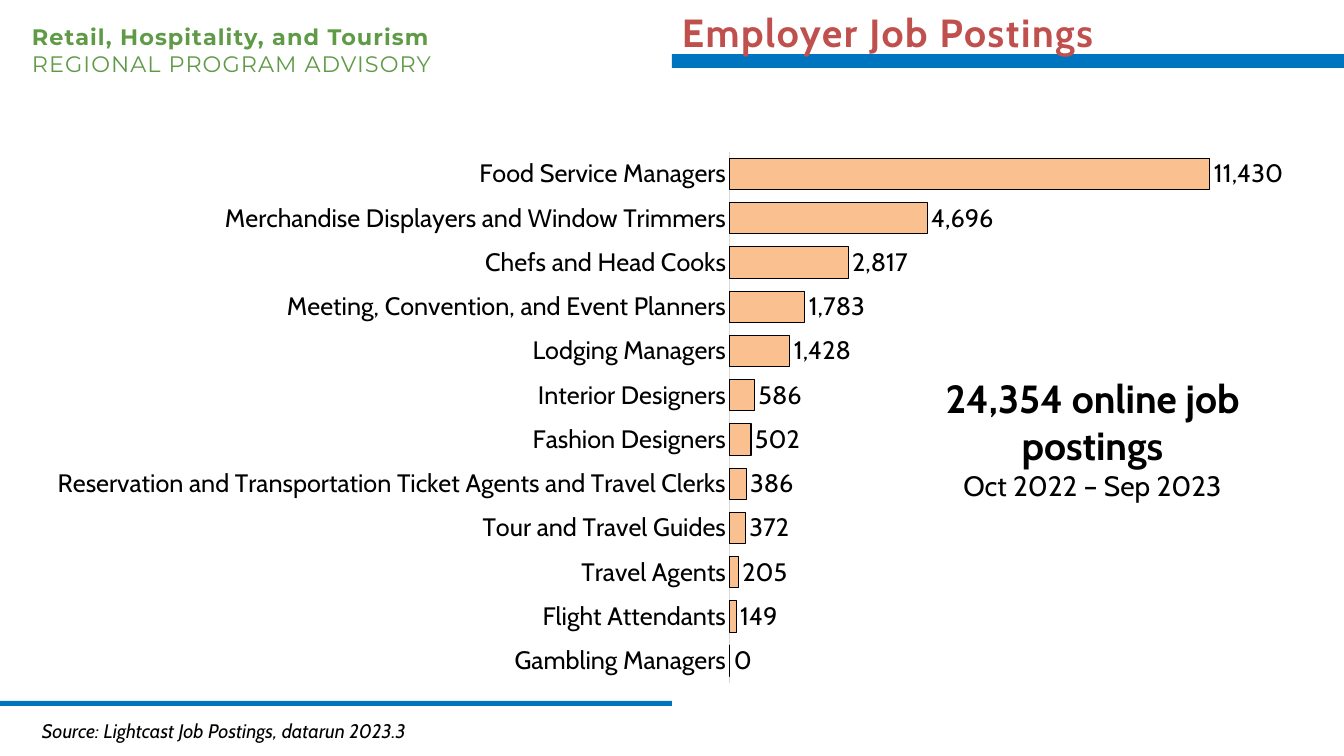
from lxml import etree
from pptx import Presentation
from pptx import util as u
from pptx.chart.data import CategoryChartData
from pptx.dml.color import RGBColor
from pptx.enum import chart as ch, shapes, text
from pptx.oxml import parse_xml
from pptx.oxml.ns import nsdecls

BLUE = RGBColor(0x00, 0x75, 0xBF)
RED = RGBColor(0xC0, 0x50, 0x4D)
GREEN = RGBColor(0x5F, 0x9A, 0x47)
PEACH = RGBColor(0xFA, 0xC0, 0x90)
GRAY = RGBColor(0xD9, 0xD9, 0xD9)
BLACK = RGBColor(0, 0, 0)

PX = 914400 / 100.8
SLIDE = (1344, 756)
CHART_BOX = (32, 141, 1311, 552)
PLOT_BOX = (730, 152, 504, 531)
AXIS_MAX = 12000
NUMBER_FORMAT = r"#,##0;[Red]\ \(#,##0\)"

RULES = [(0, 701, 672, 5), (672, 54, 672, 14)]

# box, alignment, font, colour, letter spacing in points, lines of (text, size, bold, italic)
TEXTS = [
    ((32, 714, 845, 34), text.PP_ALIGN.LEFT, "Cabin", BLACK, 0,
     [("Source: Lightcast Job Postings, datarun 2023.3", 14, False, True)]),
    ((672, 3, 672, 57), text.PP_ALIGN.LEFT, "Cabin", RED, 1.2,
     [("Employer Job Postings", 28, True, False)]),
    ((22, 18, 480, 92), text.PP_ALIGN.LEFT, "Montserrat", GREEN, 0.8,
     [("Retail, Hospitality, and Tourism", 16, True, False),
      ("REGIONAL PROGRAM ADVISORY", 16, False, False)]),
    ((899, 369, 387, 139), text.PP_ALIGN.CENTER, "Cabin", BLACK, 0,
     [("24,354 online job postings", 28, True, False),
      ("Oct 2022 – Sep 2023", 20, False, False)]),
]

POSTINGS = {
    "Gambling Managers": 0,
    "Flight Attendants": 149,
    "Travel Agents": 205,
    "Tour and Travel Guides": 372,
    "Reservation and Transportation Ticket Agents and Travel Clerks": 386,
    "Fashion Designers": 502,
    "Interior Designers": 586,
    "Lodging Managers": 1428,
    "Meeting, Convention, and Event Planners": 1783,
    "Chefs and Head Cooks": 2817,
    "Merchandise Displayers and Window Trimmers": 4696,
    "Food Service Managers": 11430,
}


def emu(box):
    return [round(length * PX) for length in box]


def style(font, name, size, color, bold=False, italic=False):
    font.name, font.size, font.color.rgb = name, u.Pt(size), color
    font.bold, font.italic = bold, italic


def add_rule(slide, box):
    rule = slide.shapes.add_shape(shapes.MSO_SHAPE.RECTANGLE, *emu(box))
    rule.shadow.inherit = False
    rule.fill.solid()
    rule.fill.fore_color.rgb = BLUE
    rule.line.fill.background()


def add_text(slide, box, align, font, color, spacing, lines):
    frame = slide.shapes.add_textbox(*emu(box)).text_frame
    frame.word_wrap = True
    frame.auto_size = text.MSO_AUTO_SIZE.SHAPE_TO_FIT_TEXT
    for i, (words, size, bold, italic) in enumerate(lines):
        line = frame.add_paragraph() if i else frame.paragraphs[0]
        line.alignment = align
        run = line.add_run()
        run.text = words
        style(line.font, font, size, color, bold, italic)
        if spacing:
            run.font._element.set("spc", str(round(spacing * 100)))


def fix_plot(chart):
    """Pin the inner plot area to PLOT_BOX."""
    left, top, width, height = CHART_BOX
    x, y, w, h = PLOT_BOX
    layout = parse_xml(f'<c:layout {nsdecls("c")}><c:manualLayout/></c:layout>')
    values = {"layoutTarget": "inner", "xMode": "edge", "yMode": "edge",
              "x": (x - left) / width, "y": (y - top) / height,
              "w": w / width, "h": h / height}
    for tag, value in values.items():
        etree.SubElement(layout[0], f"{{{layout.nsmap['c']}}}{tag}").set("val", str(value))
    plot_area = chart._chartSpace.chart.plotArea
    for old in plot_area.findall(layout.tag):
        plot_area.remove(old)
    plot_area.insert(0, layout)


def add_postings_chart(slide):
    data = CategoryChartData()
    data.categories = list(POSTINGS)
    data.add_series("Series 1", list(POSTINGS.values()))
    chart = slide.shapes.add_chart(
        ch.XL_CHART_TYPE.BAR_CLUSTERED, *emu(CHART_BOX), data).chart
    chart.has_legend = chart.has_title = False
    style(chart.font, "Cabin", 18, BLACK)
    fix_plot(chart)

    jobs = chart.category_axis
    jobs.major_tick_mark = jobs.minor_tick_mark = ch.XL_TICK_MARK.NONE
    jobs.format.line.color.rgb = GRAY
    jobs.format.line.width = u.Pt(0.75)
    style(jobs.tick_labels.font, "Cabin", 18, BLACK)

    counts = chart.value_axis
    counts.visible = counts.has_major_gridlines = False
    counts.minimum_scale, counts.maximum_scale = 0, AXIS_MAX

    plot = chart.plots[0]
    plot.gap_width = 41
    plot.vary_by_categories = False
    bars = plot.series[0]
    bars.format.fill.solid()
    bars.format.fill.fore_color.rgb = PEACH
    bars.format.line.color.rgb = BLACK
    bars.format.line.width = u.Pt(0.75)

    labels = bars.data_labels
    labels.show_value = True
    labels.position = ch.XL_LABEL_POSITION.OUTSIDE_END
    labels.number_format = NUMBER_FORMAT
    labels.number_format_is_linked = False
    style(labels.font, "Cabin", 18, BLACK)


def main():
    deck = Presentation()
    deck.slide_width, deck.slide_height = emu(SLIDE)
    slide = deck.slides.add_slide(deck.slide_layouts[6])
    for box in RULES:
        add_rule(slide, box)
    add_postings_chart(slide)
    for entry in TEXTS:
        add_text(slide, *entry)
    deck.save("out.pptx")


if __name__ == "__main__":
    main()
